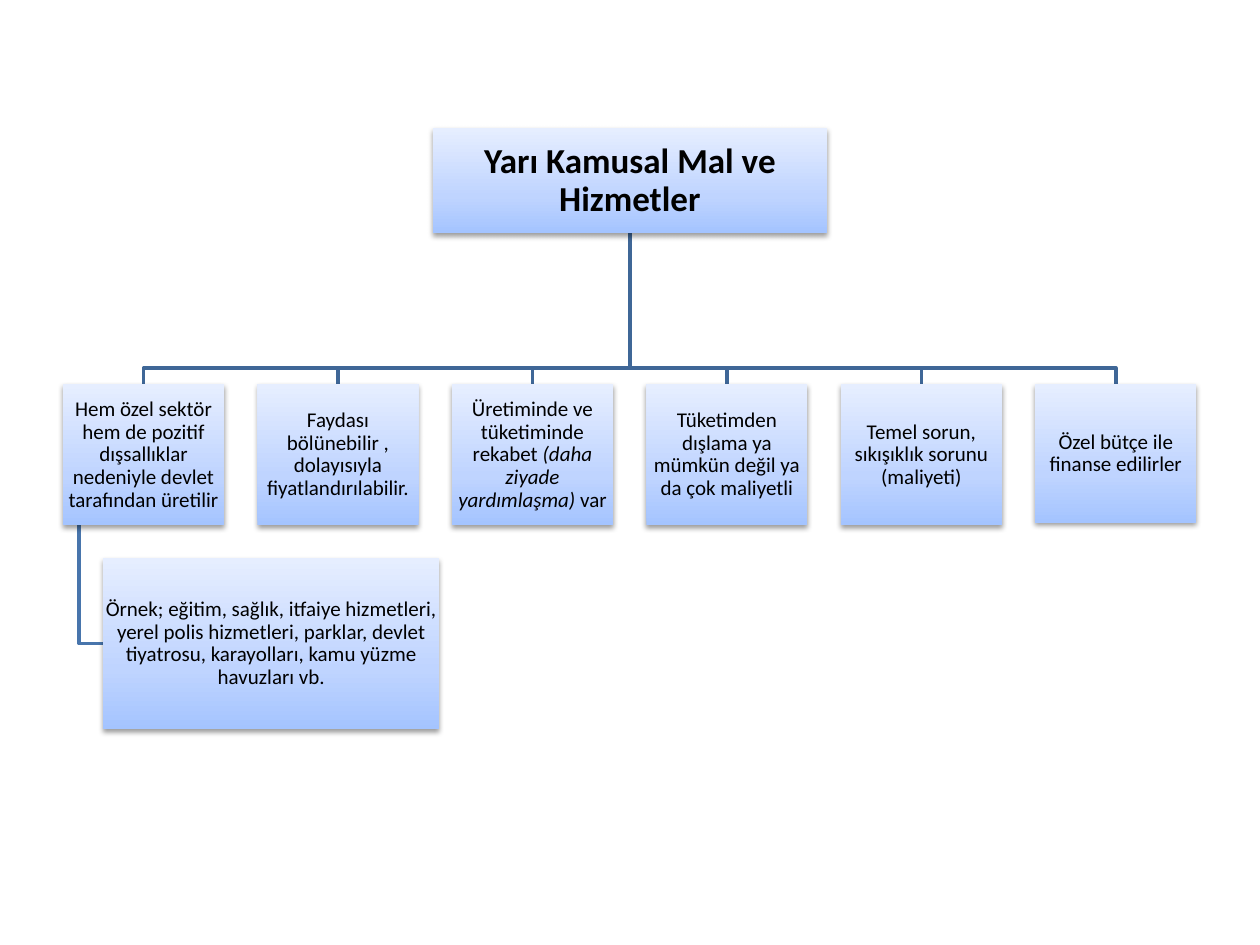
from copy import deepcopy
from dataclasses import dataclass

from lxml.etree import SubElement
from pptx import Presentation
from pptx.dml.color import RGBColor
from pptx.enum.shapes import MSO_SHAPE
from pptx.enum.text import MSO_ANCHOR, PP_ALIGN
from pptx.oxml.ns import qn
from pptx.shapes.autoshape import Shape
from pptx.slide import Slide
from pptx.util import Cm, Pt

FONT = "Calibri"
GRADIENT = [(0, "A4C4FF"), (0.35, "BFD4FF"), (1, "E6EEFF")]
TRUNK_COLOR, BRANCH_COLOR = "3F6797", "4875AC"

SLIDE_WIDTH, SLIDE_HEIGHT = 25.4, 19.05
FEATURE_LEFT, FEATURE_TOP, FEATURE_PITCH = 1.27, 7.75, 3.92
FEATURE_WIDTH, FEATURE_HEIGHT = 3.25, 2.84
BUS_Y = 7.42


@dataclass
class Node:
    """A chart box in centimetres; text pieces alternate upright and italic."""
    pieces: list[str]
    left: float
    top: float
    width: float
    height: float
    size: int = 12
    bold: bool = False

    @property
    def center(self) -> float:
        return self.left + self.width / 2

    @property
    def middle(self) -> float:
        return self.top + self.height / 2

    @property
    def bottom(self) -> float:
        return self.top + self.height


FEATURES = [
    ["Hem özel sektör hem de pozitif dışsallıklar nedeniyle devlet tarafından üretilir"],
    ["Faydası bölünebilir , dolayısıyla fiyatlandırılabilir."],
    ["Üretiminde ve tüketiminde rekabet ", "(daha ziyade yardımlaşma)", " var"],
    ["Tüketimden dışlama ya mümkün değil ya da çok maliyetli"],
    ["Temel sorun, sıkışıklık sorunu (maliyeti)"],
    ["Özel bütçe ile finanse edilirler"],
]


def color(value: str) -> RGBColor:
    return RGBColor.from_string(value)


def write_text(shape: Shape, pieces: list[str], *, size: int, bold: bool = False,
               ink: str = "000000") -> None:
    frame = shape.text_frame
    frame.word_wrap = True
    frame.vertical_anchor = MSO_ANCHOR.MIDDLE
    frame.margin_left = frame.margin_right = Cm(0.03)
    frame.margin_top = frame.margin_bottom = Cm(0.03)
    para = frame.paragraphs[0]
    para.alignment = PP_ALIGN.CENTER
    para.line_spacing = 0.9
    for index, piece in enumerate(pieces):
        span = para.add_run()
        span.text = piece
        span.font.name = FONT
        span.font.size = Pt(size)
        span.font.bold = bold
        span.font.italic = index % 2 == 1
        span.font.color.rgb = color(ink)


def fill_gradient(shape: Shape) -> None:
    shape.fill.gradient()
    shape.fill.gradient_angle = 90
    stop_list = shape.element.spPr.find(qn("a:gradFill")).find(qn("a:gsLst"))
    while len(stop_list) < len(GRADIENT):
        stop_list.append(deepcopy(stop_list[0]))
    for stop, (position, value) in zip(shape.fill.gradient_stops, GRADIENT):
        stop.position = position
        stop.color.rgb = color(value)


def add_shadow(shape: Shape) -> None:
    shape.shadow.inherit = False
    effects = shape.element.spPr.find(qn("a:effectLst"))
    shadow = SubElement(effects, qn("a:outerShdw"), blurRad=str(Pt(3.1)),
                        dist=str(Pt(1.6)), dir="5400000", rotWithShape="0")
    tint = SubElement(shadow, qn("a:srgbClr"), val="000000")
    SubElement(tint, qn("a:alpha"), val="38000")


def draw_node(page: Slide, node: Node) -> None:
    box = page.shapes.add_shape(MSO_SHAPE.RECTANGLE, Cm(node.left), Cm(node.top),
                                Cm(node.width), Cm(node.height))
    fill_gradient(box)
    box.line.fill.background()
    add_shadow(box)
    write_text(box, node.pieces, size=node.size, bold=node.bold)


def draw_elbow(page: Slide, points: list[tuple[float, float]], line_color: str) -> None:
    start, *others = [(Cm(x), Cm(y)) for x, y in points]
    builder = page.shapes.build_freeform(*start)
    builder.add_line_segments(others, close=False)
    elbow = builder.convert_to_shape()
    elbow.fill.background()
    elbow.line.color.rgb = color(line_color)
    elbow.line.width = Pt(2)
    elbow.shadow.inherit = False


def main() -> None:
    deck = Presentation()
    deck.slide_width, deck.slide_height = Cm(SLIDE_WIDTH), Cm(SLIDE_HEIGHT)
    page = deck.slides.add_slide(deck.slide_layouts[6])

    title = Node(["Yarı Kamusal Mal ve Hizmetler"], 8.73, 2.59, 7.94, 2.11,
                 size=20, bold=True)
    features = [
        Node(pieces, FEATURE_LEFT + column * FEATURE_PITCH, FEATURE_TOP,
             FEATURE_WIDTH, FEATURE_HEIGHT)
        for column, pieces in enumerate(FEATURES)
    ]
    features[-1].height = 2.79
    example = Node(["Örnek; eğitim, sağlık, itfaiye hizmetleri, yerel polis hizmetleri, "
                    "parklar, devlet tiyatrosu, karayolları, kamu yüzme havuzları vb."],
                   2.08, 11.25, 6.78, 3.45)

    for feature in features:
        draw_elbow(page, [(title.center, title.bottom), (title.center, BUS_Y),
                          (feature.center, BUS_Y), (feature.center, feature.top)],
                   TRUNK_COLOR)
    parent = features[0]
    stem = parent.left + parent.width / 10
    draw_elbow(page, [(stem, parent.bottom), (stem, example.middle),
                      (example.left, example.middle)], BRANCH_COLOR)

    for node in [title, *features, example]:
        draw_node(page, node)
    deck.save("out.pptx")


if __name__ == "__main__":
    main()
